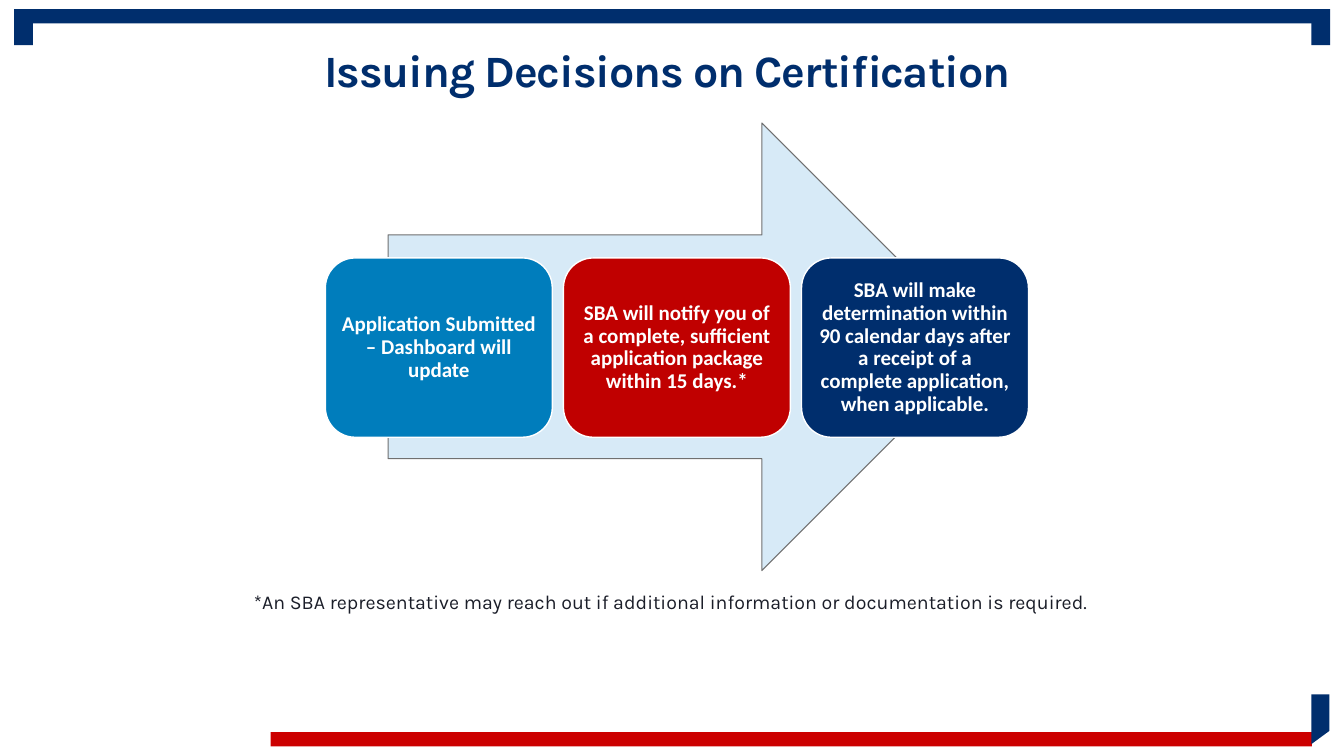
from dataclasses import dataclass

from pptx import Presentation
from pptx.dml.color import RGBColor
from pptx.enum.shapes import MSO_SHAPE
from pptx.enum.text import MSO_ANCHOR, MSO_AUTO_SIZE, PP_ALIGN
from pptx.shapes.autoshape import Shape
from pptx.slide import Slide
from pptx.util import Cm, Pt

NAVY = RGBColor(0x00, 0x2E, 0x6D)
BLUE = RGBColor(0x00, 0x7D, 0xBC)
RED = RGBColor(0xC0, 0x00, 0x00)
BRIGHT_RED = RGBColor(0xCC, 0x00, 0x00)
PALE_BLUE = RGBColor(0xD7, 0xEA, 0xF7)
GRAY = RGBColor(0x70, 0x70, 0x70)
INK = RGBColor(0x1B, 0x1E, 0x29)
WHITE = RGBColor(0xFF, 0xFF, 0xFF)

CARD_LEFT, CARD_TOP = 8.2, 6.5
CARD_WIDTH, CARD_HEIGHT = 5.72, 4.52
CARD_PITCH = 6.0


@dataclass(frozen=True)
class Bar:
    left: float
    top: float
    width: float
    height: float
    color: RGBColor


@dataclass(frozen=True)
class Step:
    text: str
    color: RGBColor


BARS = [
    Bar(0.37, 0.23, 32.69, 0.36, NAVY),
    Bar(33.05, 0.23, 0.47, 0.91, NAVY),
    Bar(0.36, 0.23, 0.47, 0.91, NAVY),
    Bar(6.82, 18.45, 26.24, 0.36, BRIGHT_RED),
]

STEPS = [
    Step("Application Submitted – Dashboard will update", BLUE),
    Step("SBA will notify you of a complete, sufficient application package "
         "within 15 days.*", RED),
    Step("SBA will make determination within 90 calendar days after a receipt "
         "of a complete application, when applicable.", NAVY),
]


def style(sp: Shape, fill: RGBColor, line: RGBColor | None = None,
          weight: float = 1) -> None:
    sp.shadow.inherit = False
    sp.fill.solid()
    sp.fill.fore_color.rgb = fill
    if line is None:
        sp.line.fill.background()
    else:
        sp.line.color.rgb = line
        sp.line.width = Pt(weight)


def add_box(s: Slide, kind: MSO_SHAPE, left: float, top: float, width: float,
            height: float, fill: RGBColor, line: RGBColor | None = None,
            weight: float = 1) -> Shape:
    sp = s.shapes.add_shape(kind, Cm(left), Cm(top), Cm(width), Cm(height))
    style(sp, fill, line, weight)
    return sp


def write(sp: Shape, text: str, *, font: str, size: float, color: RGBColor,
          bold: bool = False, anchor: MSO_ANCHOR = MSO_ANCHOR.MIDDLE,
          inset: tuple[float, float] = (0.25, 0.13),
          spacing: int | None = None) -> None:
    tf = sp.text_frame
    tf.word_wrap = True
    tf.auto_size = MSO_AUTO_SIZE.NONE
    tf.vertical_anchor = anchor
    tf.margin_left = tf.margin_right = Cm(inset[0])
    tf.margin_top = tf.margin_bottom = Cm(inset[1])
    p = tf.paragraphs[0]
    p.alignment = PP_ALIGN.CENTER
    p.line_spacing = 0.9
    p.space_before = Pt(0)
    r = p.add_run()
    r.text = text
    r.font.name = font
    r.font.size = Pt(size)
    r.font.bold = bold
    r.font.color.rgb = color
    if spacing is not None:
        r.font._element.set("spc", str(spacing))


def place(sp: Shape, left: float, top: float, width: float,
          height: float) -> None:
    sp.left, sp.top = Cm(left), Cm(top)
    sp.width, sp.height = Cm(width), Cm(height)


def add_frame(s: Slide) -> None:
    for bar in BARS:
        add_box(s, MSO_SHAPE.RECTANGLE, bar.left, bar.top, bar.width,
                bar.height, bar.color)
    fb = s.shapes.build_freeform(Cm(33.05), Cm(17.5))
    fb.add_line_segments([(Cm(33.5), Cm(17.5)), (Cm(33.5), Cm(18.42)),
                          (Cm(33.05), Cm(18.75))], close=True)
    style(fb.convert_to_shape(), NAVY)


def add_process(s: Slide) -> None:
    add_box(s, MSO_SHAPE.RIGHT_ARROW, 9.78, 3.1, 15.06, 11.28, PALE_BLUE,
            GRAY, 0.75)
    for i, step in enumerate(STEPS):
        card = add_box(s, MSO_SHAPE.ROUNDED_RECTANGLE,
                       CARD_LEFT + i * CARD_PITCH, CARD_TOP, CARD_WIDTH,
                       CARD_HEIGHT, step.color, WHITE)
        write(card, step.text, font="Calibri", size=15, color=WHITE,
              bold=True, inset=(0.15, 0.15))


def main() -> None:
    prs = Presentation()
    prs.slide_width, prs.slide_height = Cm(33.87), Cm(19.05)
    s = prs.slides.add_slide(prs.slide_layouts[0])
    add_frame(s)

    title, footnote = s.shapes.title, s.placeholders[1]
    place(title, 2.34, 1.02, 29.21, 1.65)
    write(title, "Issuing Decisions on Certification ", font="Karla", size=32,
          color=NAVY, bold=True, spacing=-80)
    place(footnote, 5.97, 14.81, 21.89, 1.93)
    write(footnote, "*An SBA representative may reach out if additional "
          "information or documentation is required.", font="Karla", size=14,
          color=INK, anchor=MSO_ANCHOR.TOP)

    add_process(s)
    prs.save("out.pptx")


if __name__ == "__main__":
    main()
